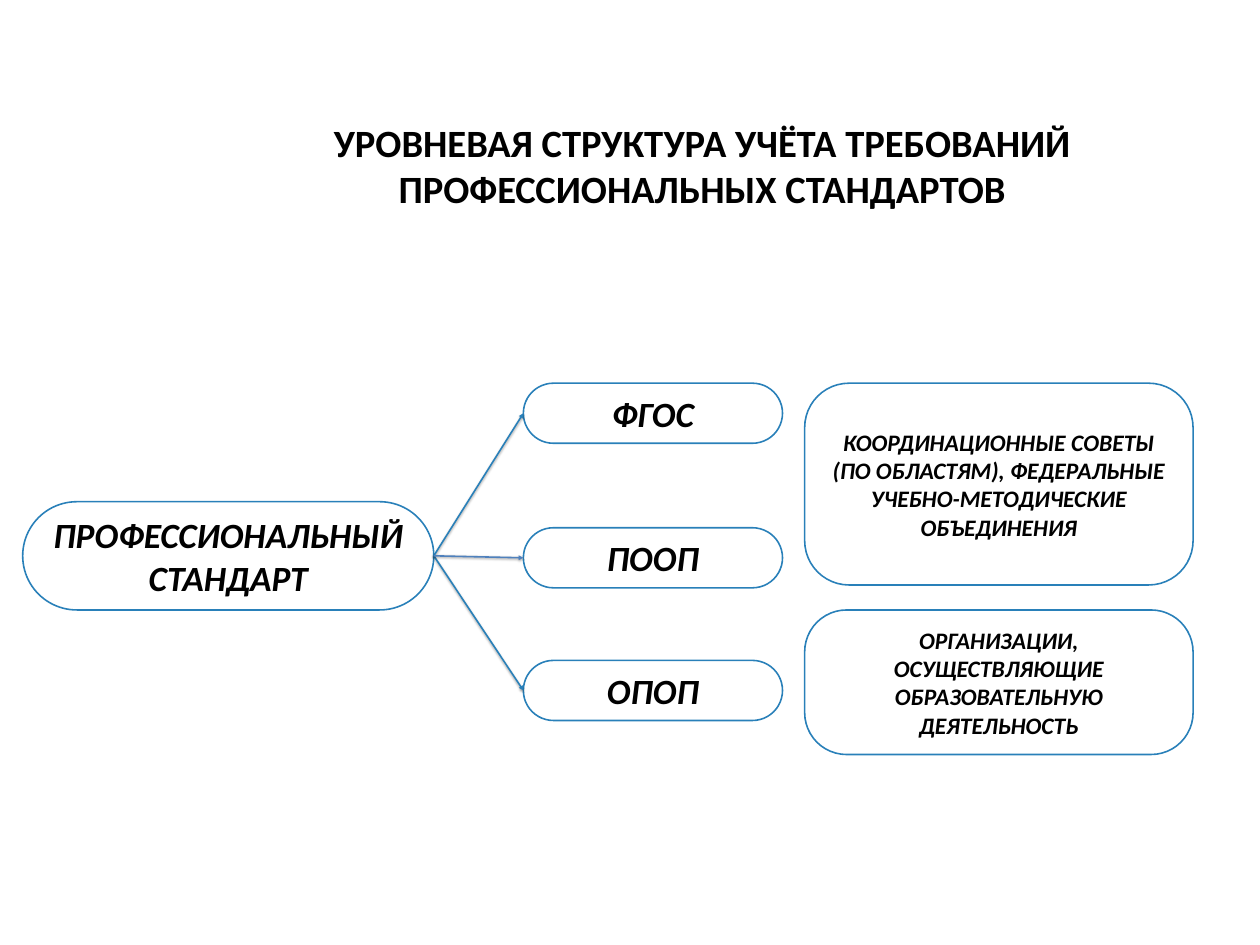
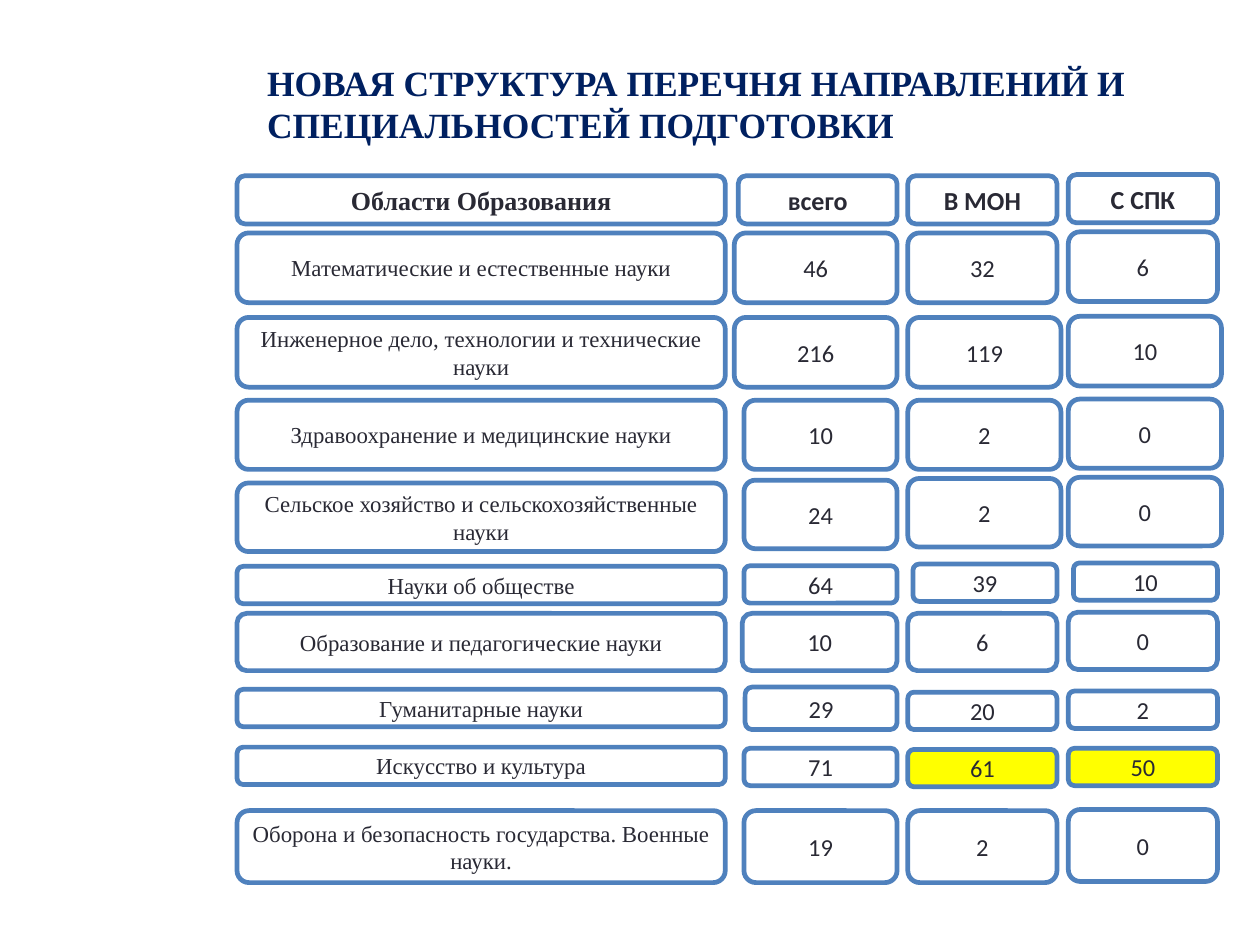
from dataclasses import dataclass

from lxml import etree
from pptx import Presentation
from pptx.dml.color import RGBColor
from pptx.enum.shapes import MSO_CONNECTOR, MSO_SHAPE
from pptx.enum.text import MSO_ANCHOR, PP_ALIGN
from pptx.oxml import parse_xml
from pptx.oxml.ns import nsdecls, qn
from pptx.util import Inches, Pt

ROUNDED = MSO_SHAPE.ROUNDED_RECTANGLE
STRAIGHT = MSO_CONNECTOR.STRAIGHT
MIDDLE, TOP = MSO_ANCHOR.MIDDLE, MSO_ANCHOR.TOP
CENTER, LEFT = PP_ALIGN.CENTER, PP_ALIGN.LEFT
LEFT_SIDE, RIGHT_SIDE = 1, 3  # connection sites of a rounded rectangle


@dataclass(frozen=True)
class Theme:
    sans: str = "Calibri"
    serif: str = "Times New Roman"
    black: str = "000000"
    ink: str = "292934"
    navy: str = "002060"
    white: str = "FFFFFF"
    yellow: str = "FFFF00"
    scheme_line: str = "2980B9"
    grid_line: str = "4F81BD"
    scheme_title: int = 49
    grid_title: int = 45
    node: int = 45
    owner: int = 30
    header: int = 33
    label: int = 29
    number: int = 31
    thin: int = 2
    thick: int = 6


theme = Theme()


def write(box, text, size, font, color, bold=False, italic=False,
          align=CENTER, anchor=MIDDLE):
    frame = box.text_frame
    frame.word_wrap = True
    frame.vertical_anchor = anchor
    para = frame.paragraphs[0]
    para.text = text
    para.alignment = align
    para.font.size = Pt(size)
    para.font.name = font
    para.font.bold = bold
    para.font.italic = italic
    para.font.color.rgb = RGBColor.from_string(color)


def add_box(page, place, line, width, fill=theme.white, rounding=None):
    box = page.shapes.add_shape(ROUNDED, *map(Inches, place))
    box.shadow.inherit = False
    box.fill.solid()
    box.fill.fore_color.rgb = RGBColor.from_string(fill)
    box.line.color.rgb = RGBColor.from_string(line)
    box.line.width = Pt(width)
    if rounding is not None:
        box.adjustments[0] = rounding
    return box


deck = Presentation()
deck.slide_width, deck.slide_height = Inches(22.22), Inches(16.67)
blank = deck.slide_layouts[6]

# Slide 1: levels at which the standard is applied
page = deck.slides.add_slide(blank)
title = page.shapes.add_textbox(*map(Inches, (4.12, 2.04, 16.52, 1.41)))
write(title, "УРОВНЕВАЯ СТРУКТУРА УЧЁТА ТРЕБОВАНИЙ ПРОФЕССИОНАЛЬНЫХ СТАНДАРТОВ",
      theme.scheme_title, theme.sans, theme.black, bold=True, anchor=TOP)

# Text, place, type size, corner rounding
scheme = [
    ("ПРОФЕССИОНАЛЬНЫЙ СТАНДАРТ", (0.4, 8.85, 7.25, 1.91), theme.node, 0.5),
    ("ФГОС", (9.23, 6.76, 4.57, 1.06), theme.node, 0.5),
    ("ОПОП", (9.23, 11.65, 4.57, 1.06), theme.node, 0.5),
    ("ПООП", (9.23, 9.31, 4.57, 1.06), theme.node, 0.5),
    ("КООРДИНАЦИОННЫЕ СОВЕТЫ (ПО ОБЛАСТЯМ), ФЕДЕРАЛЬНЫЕ "
     "УЧЕБНО-МЕТОДИЧЕСКИЕ ОБЪЕДИНЕНИЯ",
     (14.19, 6.76, 6.85, 3.56), theme.owner, 0.22),
    ("ОРГАНИЗАЦИИ, ОСУЩЕСТВЛЯЮЩИЕ ОБРАЗОВАТЕЛЬНУЮ ДЕЯТЕЛЬНОСТЬ",
     (14.19, 10.76, 6.85, 2.55), theme.owner, 0.29),
]
nodes = {}
for text, place, size, rounding in scheme:
    box = add_box(page, place, theme.scheme_line, theme.thin, rounding=rounding)
    write(box, text, size, theme.sans, theme.black, bold=True, italic=True)
    nodes[text] = box

# Arrows from the standard to each level
arrows = [("ОПОП", theme.scheme_line), ("ФГОС", theme.scheme_line),
          ("ПООП", theme.grid_line)]
for level, color in arrows:
    arrow = page.shapes.add_connector(STRAIGHT, 0, 0, 0, 0)
    arrow.begin_connect(nodes["ПРОФЕССИОНАЛЬНЫЙ СТАНДАРТ"], RIGHT_SIDE)
    arrow.end_connect(nodes[level], LEFT_SIDE)
    arrow.line.color.rgb = RGBColor.from_string(color)
    arrow.line.width = Pt(theme.thin)
    etree.SubElement(arrow.line._get_or_add_ln(), qn("a:tailEnd"), type="triangle")
    arrow._element.spPr.append(parse_xml(
        f'<a:effectLst {nsdecls("a")}>'
        '<a:outerShdw blurRad="39370" dist="20320" dir="5400000" rotWithShape="0">'
        f'<a:srgbClr val="{theme.black}"><a:alpha val="38000"/></a:srgbClr>'
        '</a:outerShdw></a:effectLst>'))

# Slide 2: numbers by field of education
page = deck.slides.add_slide(blank)
title = page.shapes.add_textbox(*map(Inches, (4.49, 0.63, 17.48, 2.39)))
frame = title.text_frame
frame.margin_left = frame.margin_right = Inches(0.22)
frame.margin_top = frame.margin_bottom = Inches(0.11)
write(title, "НОВАЯ СТРУКТУРА ПЕРЕЧНЯ НАПРАВЛЕНИЙ И СПЕЦИАЛЬНОСТЕЙ ПОДГОТОВКИ",
      theme.grid_title, theme.serif, theme.navy, bold=True, align=LEFT)

FIELD_LEFT, FIELD_WIDTH = 4.18, 8.61
TOTAL_RIGHT = 15.82
LAST_SHIFT, LAST_RISE = 2.83, 0.02  # last column relative to the third

# Texts; tops of the first three columns; height; height of the total;
# left of the total; left and right of the third column
rows = [
    (("Области Образования", "всего", "В МОН", "С СПК"),
     (3.1, 3.1, 3.1), 0.85, 0.85, 13.02, 16.01, 18.64),
    (("Математические и естественные науки", "46", "32", "6"),
     (4.11, 4.11, 4.11), 1.23, 1.23, 12.95, 16.01, 18.64),
    (("Инженерное дело, технологии и технические науки", "216", "119", "10"),
     (5.6, 5.6, 5.6), 1.23, 1.23, 12.95, 16.01, 18.71),
    (("Здравоохранение и медицинские науки", "10", "2", "0"),
     (7.06, 7.06, 7.06), 1.22, 1.22, 13.12, 16.01, 18.71),
    (("Сельское хозяйство и сельскохозяйственные науки", "24", "2", "0"),
     (8.52, 8.47, 8.44), 1.21, 1.21, 13.12, 16.01, 18.71),
    (("Науки об обществе", "64", "39", "10"),
     (9.99, 9.98, 9.95), 0.66, 0.66, 13.12, 16.1, 18.64),
    (("Образование и педагогические науки", "10", "6", "0"),
     (10.82, 10.82, 10.82), 1.01, 1.01, 13.09, 16.01, 18.64),
    (("Гуманитарные науки", "29", "20", "2"),
     (12.16, 12.12, 12.21), 0.66, 0.75, 13.14, 16.01, 18.64),
    (("Искусство и культура", "71", "61", "50"),
     (13.18, 13.2, 13.22), 0.66, 0.66, 13.12, 16.01, 18.64),
    (("Оборона и безопасность государства. Военные науки.", "19", "2", "0"),
     (14.3, 14.3, 14.3), 1.27, 1.27, 13.12, 16.01, 18.64),
]
highlighted = {"61", "50"}

for index, (texts, tops, height, total_height, total_left, left, right) in enumerate(rows):
    is_header = index == 0
    field_top, total_top, top = tops
    width = right - left
    places = [
        (FIELD_LEFT, field_top, FIELD_WIDTH, height),
        (total_left, total_top, TOTAL_RIGHT - total_left, total_height),
        (left, top, width, height),
        (left + LAST_SHIFT, top - LAST_RISE, width, height),
    ]
    for column, (text, place) in enumerate(zip(texts, places)):
        fill = theme.yellow if text in highlighted else theme.white
        font = theme.sans if column else theme.serif
        body_size = theme.number if column else theme.label
        box = add_box(page, place, theme.grid_line, theme.thick, fill)
        write(box, text, theme.header if is_header else body_size,
              font, theme.ink, bold=is_header)

deck.save("out.pptx")
